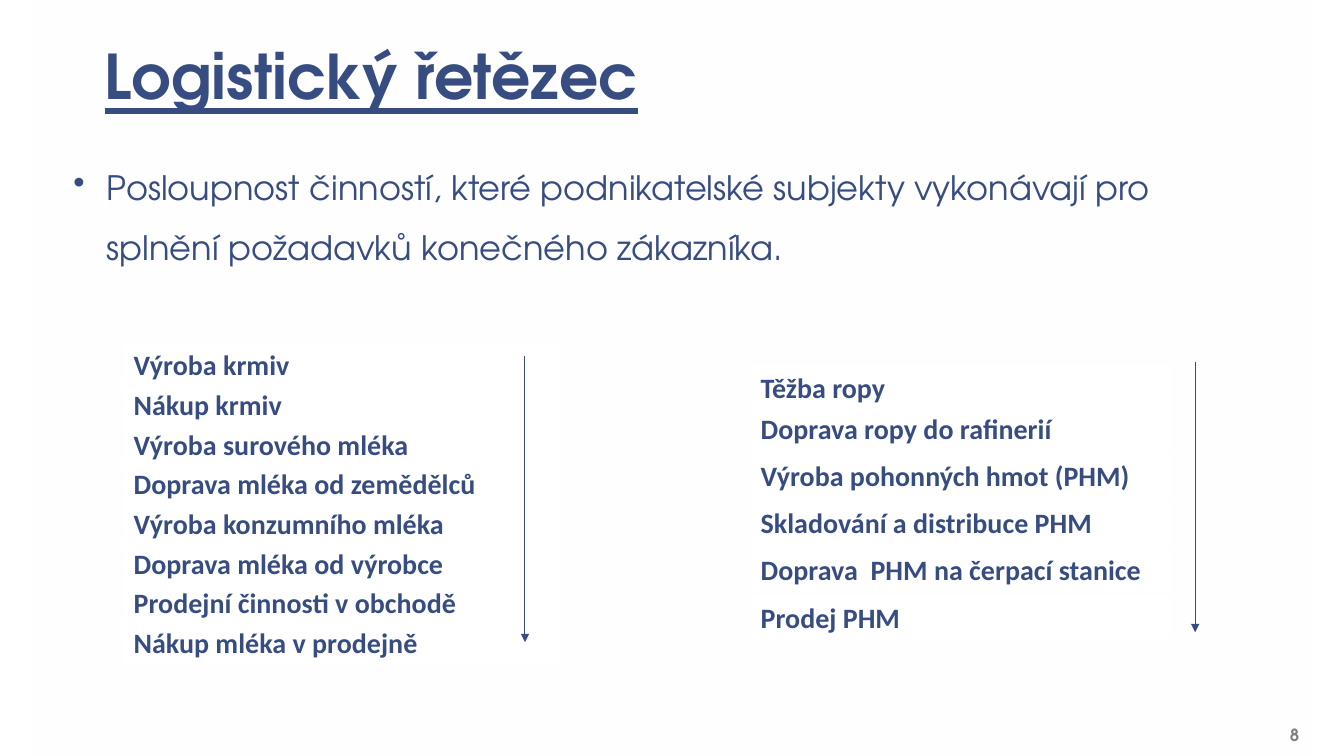
from dataclasses import dataclass

from lxml.etree import SubElement
from pptx import Presentation
from pptx.dml.color import RGBColor
from pptx.enum.shapes import MSO_CONNECTOR, MSO_SHAPE
from pptx.enum.text import MSO_ANCHOR, PP_ALIGN
from pptx.oxml.ns import qn
from pptx.util import Cm, Pt


@dataclass(frozen=True)
class Theme:
    """Colours, fonts and type sizes of the slide."""
    ink: RGBColor = RGBColor.from_string("374C81")
    muted: RGBColor = RGBColor.from_string("7F7F7F")
    paper: RGBColor = RGBColor.from_string("FFFFFF")
    display: str = "TeX Gyre Adventor"
    label: str = "Calibri"
    title_size: int = 44
    body_size: int = 24
    step_size: int = 20
    number_size: int = 12


class SlideBuilder:
    """Draws each kind of element in one style on one slide."""

    def __init__(self, page, theme):
        """Keep the slide and its theme."""
        self.page = page
        self.theme = theme

    def style(self, paragraph, size, name, color, bold):
        """Set the font of a paragraph."""
        font = paragraph.font
        font.size, font.name, font.bold = Pt(size), name, bold
        font.color.rgb = color

    def panel(self, left, top, width, height):
        """Add a plain rectangle without line or shadow."""
        box = self.page.shapes.add_shape(
            MSO_SHAPE.RECTANGLE, Cm(left), Cm(top), Cm(width), Cm(height))
        box.shadow.inherit = False
        box.line.fill.background()
        return box

    def backdrop(self, left, top, width, height):
        """Add the background panel that fades to transparency."""
        fill = self.panel(left, top, width, height).fill
        fill.gradient()
        fill.gradient_angle = 230
        for stop in fill.gradient_stops:
            stop.color.rgb = self.theme.paper
        gradient = fill.gradient_stops[1].color._xFill
        SubElement(gradient.find(qn("a:srgbClr")), qn("a:alpha"), val="55000")

    def text(self, place, words, size, color=None, bold=False,
             anchor=MSO_ANCHOR.BOTTOM):
        """Add a text box in the display font and return its paragraph."""
        box = self.page.shapes.add_textbox(*(Cm(length) for length in place))
        frame = box.text_frame
        frame.word_wrap = True
        frame.vertical_anchor = anchor
        frame.margin_left = frame.margin_right = Cm(0.33)
        frame.margin_top = frame.margin_bottom = Cm(0.18)
        paragraph = frame.paragraphs[0]
        paragraph.text = words
        self.style(paragraph, size, self.theme.display,
                   color or self.theme.ink, bold)
        return paragraph

    def title(self, place, words):
        """Add the underlined heading."""
        paragraph = self.text(place, words, self.theme.title_size, bold=True)
        paragraph.font.underline = True
        paragraph.line_spacing = 0.85

    def bullet(self, place, words):
        """Add a bulleted statement."""
        paragraph = self.text(place, words, self.theme.body_size,
                              anchor=MSO_ANCHOR.TOP)
        paragraph.line_spacing = 1.5
        properties = paragraph._p.get_or_add_pPr()
        properties.set("marL", str(Cm(0.84)))
        properties.set("indent", str(-Cm(0.84)))
        mark = properties.makeelement(qn("a:buChar"), {"char": "•"})
        properties.insert_element_before(mark, "a:tabLst", "a:defRPr")

    def number(self, place, words):
        """Add the slide number."""
        paragraph = self.text(place, words, self.theme.number_size,
                              self.theme.muted, bold=True)
        paragraph.alignment = PP_ALIGN.RIGHT

    def step(self, left, top, width, words):
        """Add one labelled step of a chain."""
        box = self.panel(left, top, width, 1.12)
        box.fill.solid()
        box.fill.fore_color.rgb = self.theme.paper
        box.text_frame.word_wrap = True
        box.text_frame.vertical_anchor = MSO_ANCHOR.TOP
        paragraph = box.text_frame.paragraphs[0]
        paragraph.text = words
        paragraph.alignment = PP_ALIGN.LEFT
        self.style(paragraph, self.theme.step_size, self.theme.label,
                   self.theme.ink, True)

    def chain(self, left, top, width, pitch, steps):
        """Stack steps at an equal pitch."""
        for index, words in enumerate(steps):
            self.step(left, top + index * pitch, width, words)

    def arrow(self, x, top, bottom):
        """Add a downward arrow."""
        line = self.page.shapes.add_connector(
            MSO_CONNECTOR.STRAIGHT, Cm(x), Cm(top), Cm(x), Cm(bottom))
        line.line.color.rgb = self.theme.ink
        line.line.width = Pt(0.75)
        SubElement(line.line._get_or_add_ln(), qn("a:tailEnd"), type="triangle")
        SubElement(line._element.spPr, qn("a:effectLst"))


MILK_STEPS = (
    "Výroba krmiv",
    "Nákup krmiv",
    "Výroba surového mléka",
    "Doprava mléka od zemědělců",
    "Výroba konzumního mléka",
    "Doprava mléka od výrobce",
    "Prodejní činnosti v obchodě",
    "Nákup mléka v prodejně",
)
FUEL_STEPS = (
    "Doprava ropy do rafinerií",
    "Výroba pohonných hmot (PHM)",
    "Skladování a distribuce PHM",
    "Doprava  PHM na čerpací stanice",
    "Prodej PHM",
)


def main():
    """Build and save the deck."""
    deck = Presentation()
    deck.slide_width, deck.slide_height = Cm(33.87), Cm(19.05)
    page = deck.slides.add_slide(deck.slide_layouts[6])
    slide = SlideBuilder(page, Theme())
    slide.backdrop(0.84, 0, 32.16, 19.05)
    slide.title((2.31, -0.89, 28.22, 3.89), "Logistický řetězec")
    slide.bullet((1.52, 3.51, 30.81, 3.43),
                 "Posloupnost činností, které podnikatelské subjekty vykonávají "
                 "pro splnění požadavků konečného zákazníka.")
    slide.number((30, 18.06, 3.07, 0.89), "8")
    slide.chain(3.12, 8.64, 11, 1, MILK_STEPS)
    slide.step(18.92, 9.2, 10.59, "Těžba ropy")
    slide.chain(18.92, 10.24, 10.59, 1.19, FUEL_STEPS)
    slide.arrow(13.23, 8.97, 16.18)
    slide.arrow(30.12, 9.12, 15.93)
    deck.save("out.pptx")


if __name__ == "__main__":
    main()
